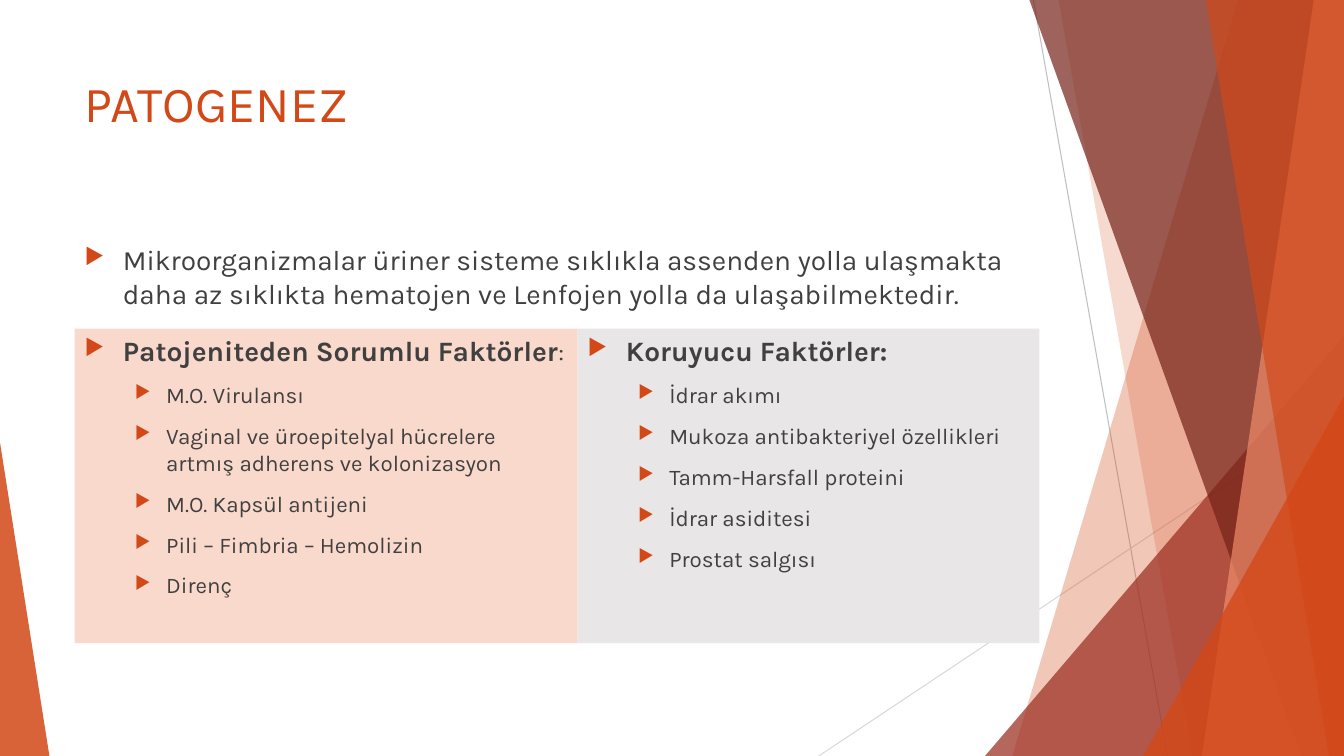
from lxml import etree
from pptx import Presentation
from pptx.dml.color import RGBColor
from pptx.enum import shapes, text
from pptx.oxml import ns
from pptx.util import Inches, Pt

# Content
TITLE = "PATOGENEZ"
INTRO = ("Mikroorganizmalar üriner sisteme sıklıkla assenden yolla ulaşmakta "
         "daha az sıklıkta hematojen ve Lenfojen yolla da ulaşabilmektedir.")
PANELS = [
    {"heading": "Patojeniteden Sorumlu Faktörler", "tail": ":",
     "width": 4.99, "fill": "FAD9CD",
     "items": ["M.O. Virulansı",
               "Vaginal ve üroepitelyal hücrelere artmış adherens ve kolonizasyon",
               "M.O. Kapsül antijeni", "Pili – Fimbria – Hemolizin", "Direnç"]},
    {"heading": "Koruyucu Faktörler:", "tail": "",
     "width": 4.58, "fill": "E9E6E7",
     "items": ["İdrar akımı", "Mukoza antibakteriyel özellikleri",
               "Tamm-Harsfall proteini", "İdrar asiditesi", "Prostat salgısı"]},
]
THEME = {
    "font": "Karla", "bullet_font": "OpenSymbol",
    "accent": "D34817", "body": "404040",
    "title_size": 36, "lead_size": 20, "tail_size": 18, "item_size": 16,
    "bullet_percent": 80, "space_before": 10,
}
# Hanging indents by level: text margin, bullet offset
INDENTS = [(0.38, -0.38), (0.81, -0.31)]

# Decoration
WIDTH, HEIGHT, TOP = 13.33, 7.5, 0
LEFT = 0.74
PANEL_TOP, PANEL_HEIGHT = 3.26, 3.12
HAIRLINES = [
    ((10.25, 0), (11.58, HEIGHT), "BFBFBF"),
    ((WIDTH, 4.03), (8.12, HEIGHT), "D9D9D9"),
]


def band(top_x, bottom_x):
    """Area between a slanted edge and the right side of the slide."""
    return [(top_x, TOP), (WIDTH, TOP), (WIDTH, HEIGHT), (bottom_x, HEIGHT)]


def wedge(apex_x, apex_y, foot_x):
    """Right triangle standing on the bottom edge."""
    return [(apex_x, apex_y), (apex_x, HEIGHT), (foot_x, HEIGHT)]


# Outline, colour, opacity in percent, from back to front
SHARDS = [
    (band(12.28, 10.04), "D34817", 30),
    (band(10.5, 11.83), "D34817", 20),
    (wedge(WIDTH, 3.33, 9.77), "9B2D1F", 72),
    (band(10.21, 12.91), "742217", 70),
    (band(13.03, 11.92), "EF8C6A", 70),
    (band(11.96, 13.18), "D34817", 65),
    (wedge(WIDTH, 3.93, 11.34), "D34817", 80),
    (wedge(0, 4.39, 0.49), "D34817", 85),
]


def paint(shape, colour, opacity=100):
    shape.shadow.inherit = False
    shape.fill.solid()
    shape.fill.fore_color.rgb = RGBColor.from_string(colour)
    shape.line.fill.background()
    if opacity < 100:
        swatch = shape.fill._xPr.find(".//" + ns.qn("a:srgbClr"))
        etree.SubElement(swatch, ns.qn("a:alpha"), val=str(opacity * 1000))


def add_hairline(page, start, end, colour):
    ends = [Inches(value) for value in (*start, *end)]
    line = page.shapes.add_connector(shapes.MSO_CONNECTOR.STRAIGHT, *ends)
    line.line.color.rgb = RGBColor.from_string(colour)
    line.line.width = Pt(0.75)
    etree.SubElement(line._element.spPr, ns.qn("a:effectLst"))


def add_shard(page, points, colour, opacity):
    corners = [(Inches(x), Inches(y)) for x, y in points]
    builder = page.shapes.build_freeform(*corners[0])
    builder.add_line_segments(corners[1:], close=True)
    paint(builder.convert_to_shape(), colour, opacity)


def prepare(box):
    frame = box.text_frame
    frame.word_wrap = True
    frame.vertical_anchor = text.MSO_ANCHOR.TOP
    return frame


def add_span(para, words, size, colour=THEME["body"], bold=False):
    span = para.add_run()
    span.text = words
    span.font.name = THEME["font"]
    span.font.size = Pt(size)
    span.font.bold = bold
    span.font.color.rgb = RGBColor.from_string(colour)


def make_bullet(para, level=0):
    para.level = level
    para.alignment = text.PP_ALIGN.LEFT
    para.space_before = Pt(THEME["space_before"])
    margin, offset = INDENTS[level]
    props = para._p.get_or_add_pPr()
    props.set("marL", str(Inches(margin)))
    props.set("indent", str(Inches(offset)))
    colour = etree.SubElement(props, ns.qn("a:buClr"))
    etree.SubElement(colour, ns.qn("a:srgbClr"), val=THEME["accent"])
    etree.SubElement(props, ns.qn("a:buSzPct"), val=str(THEME["bullet_percent"] * 1000))
    etree.SubElement(props, ns.qn("a:buFont"), typeface=THEME["bullet_font"])
    etree.SubElement(props, ns.qn("a:buChar"), char="▶")


def add_text_box(page, top, height):
    return prepare(page.shapes.add_textbox(
        Inches(LEFT), Inches(top), Inches(9.4), Inches(height)))


def add_panel(page, left, panel):
    box = page.shapes.add_shape(
        shapes.MSO_SHAPE.RECTANGLE, Inches(left), Inches(PANEL_TOP),
        Inches(panel["width"]), Inches(PANEL_HEIGHT))
    paint(box, panel["fill"])
    frame = prepare(box)
    heading = frame.paragraphs[0]
    make_bullet(heading)
    add_span(heading, panel["heading"], THEME["lead_size"], bold=True)
    if panel["tail"]:
        add_span(heading, panel["tail"], THEME["tail_size"])
    for item in panel["items"]:
        para = frame.add_paragraph()
        make_bullet(para, level=1)
        add_span(para, item, THEME["item_size"])


def main():
    deck = Presentation()
    deck.slide_width, deck.slide_height = Inches(WIDTH), Inches(HEIGHT)
    page = deck.slides.add_slide(deck.slide_layouts[6])

    # Background decoration
    for hairline in HAIRLINES:
        add_hairline(page, *hairline)
    for shard in SHARDS:
        add_shard(page, *shard)

    # Title and introduction
    title = add_text_box(page, 0.67, 1.44).paragraphs[0]
    add_span(title, TITLE, THEME["title_size"], THEME["accent"])
    intro = add_text_box(page, 2.36, 4.24).paragraphs[0]
    make_bullet(intro)
    add_span(intro, INTRO, THEME["lead_size"])

    # Side-by-side panels
    left = LEFT
    for panel in PANELS:
        add_panel(page, left, panel)
        left += panel["width"]

    deck.save("out.pptx")


if __name__ == "__main__":
    main()
